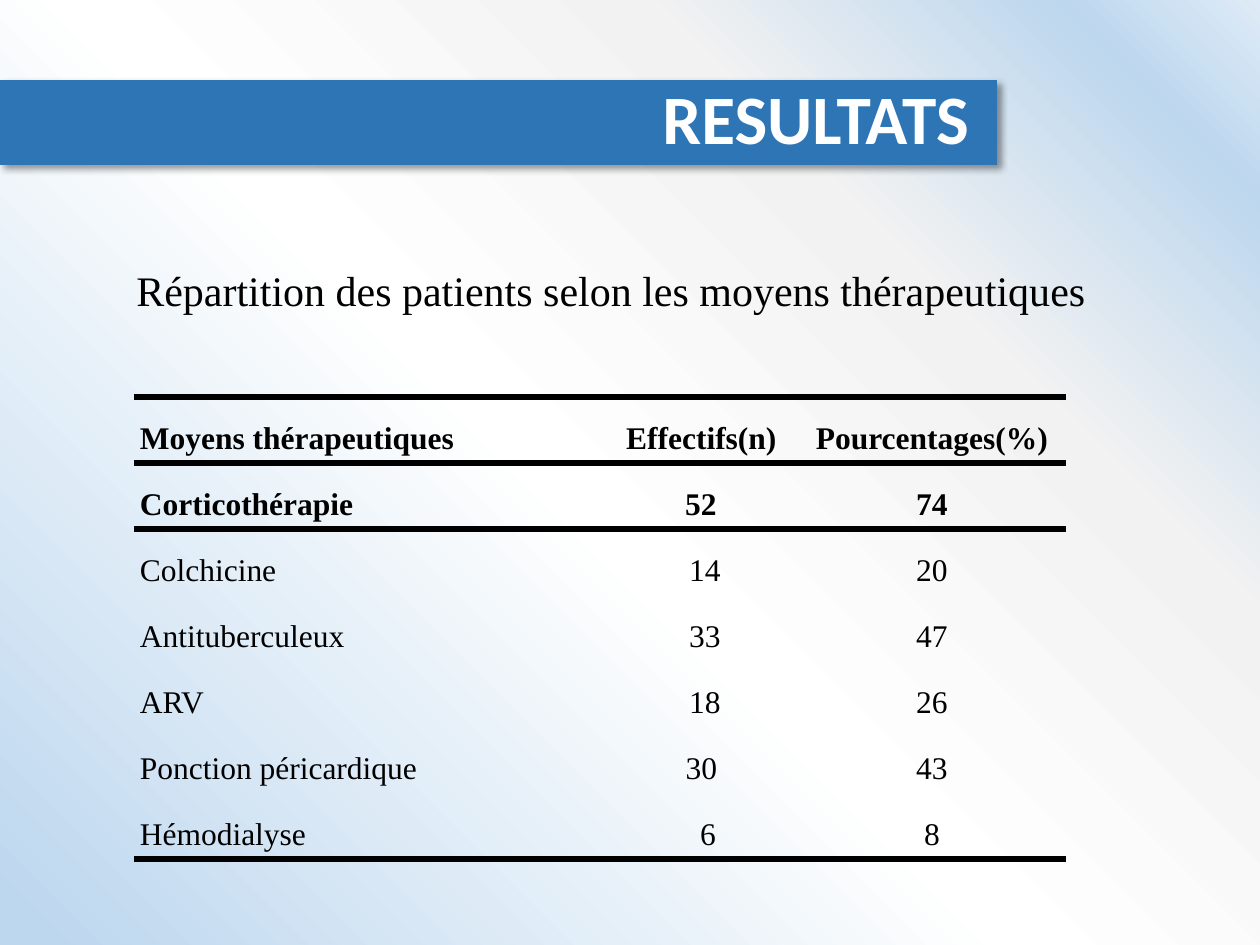
"""Build the results slide: title band, caption and table of treatments."""
from dataclasses import dataclass

from pptx import Presentation
from pptx.dml.color import RGBColor
from pptx.enum.shapes import MSO_SHAPE
from pptx.enum.text import MSO_ANCHOR, PP_ALIGN
from pptx.oxml import parse_xml
from pptx.oxml.ns import nsdecls, qn
from pptx.slide import Slide
from pptx.table import _Cell
from pptx.util import Emu, Pt

RECT = MSO_SHAPE.RECTANGLE
MIDDLE = MSO_ANCHOR.MIDDLE
LEFT, CENTER, RIGHT = PP_ALIGN.LEFT, PP_ALIGN.CENTER, PP_ALIGN.RIGHT
SCALE = 914400 / 126
PLAIN_STYLE = "{2D5ABB26-0587-4C30-8999-92F81FD0307C}"


@dataclass(frozen=True)
class Theme:
    """Colours, fonts and type sizes."""
    ink: str = "000000"
    band: str = "2E75B6"
    light: str = "FFFFFF"
    sans: str = "Calibri"
    serif: str = "Times New Roman"
    title: float = 39.6
    lead: float = 24
    body: float = 18
    rule: float = 3.75
    stops: tuple = ((0, "DEEBF7"), (9, "BDD7EE"), (28, "F2F2F2"),
                    (54, "FFFFFF"), (98, "BDD7EE"))


@dataclass(frozen=True)
class Row:
    """One table row, with the indent of its count."""
    name: str
    count: str
    share: str
    indent: int = 8
    bold: bool = False


THEME = Theme()
COLS = (470, 194, 268)
HEIGHT = 66
ROWS = (
    Row("Moyens thérapeutiques", "Effectifs(n)", "Pourcentages(%)", 1, True),
    Row("Corticothérapie", "52", "74", 0, True),
    Row("Colchicine", "14", "20"),
    Row("Antituberculeux", "33", "47"),
    Row("ARV", "18", "26"),
    Row("Ponction péricardique", "30", "43", 1),
    Row("Hémodialyse", "6", "8", 14),
)


def px(size: int) -> Emu:
    """Turn pixels into EMU."""
    return Emu(round(size * SCALE))


def write(frame, text: str, face: str, size: float, color: str,
          align=LEFT, bold: bool = False, gap: float = 1, indent: int = 0) -> None:
    """Fill a text frame with one styled paragraph."""
    para = frame.paragraphs[0]
    para.text = text
    para.alignment = align
    para.line_spacing = gap
    font = para.font
    font.name, font.size, font.bold = face, Pt(size), bold
    font.color.rgb = RGBColor.from_string(color)
    if indent:
        para._p.get_or_add_pPr().set("marL", str(px(indent)))


def paint(slide: Slide) -> None:
    """Give the slide its corner gradient."""
    stops = "".join(
        f'<a:gs pos="{pos * 1000}"><a:srgbClr val="{color}"/></a:gs>'
        for pos, color in THEME.stops)
    slide.element.cSld.insert(0, parse_xml(
        f'<p:bg {nsdecls("p", "a")}><p:bgPr><a:gradFill rotWithShape="1">'
        f'<a:gsLst>{stops}</a:gsLst><a:path path="circle">'
        '<a:fillToRect l="100000" b="100000"/></a:path>'
        '<a:tileRect t="-100000" r="-100000"/></a:gradFill>'
        '<a:effectLst/></p:bgPr></p:bg>'))


def banner(slide: Slide, text: str) -> None:
    """Draw the title band with its soft shadow."""
    band = slide.shapes.add_shape(RECT, 0, px(80), px(997), px(85))
    band.fill.solid()
    band.fill.fore_color.rgb = RGBColor.from_string(THEME.band)
    band.line.fill.background()
    band.shadow.inherit = False
    band.element.spPr.find(qn("a:effectLst")).append(parse_xml(
        f'<a:outerShdw {nsdecls("a")} blurRad="{Pt(4)}" dist="{Pt(3)}" '
        f'dir="2700000" algn="tl" rotWithShape="0"><a:srgbClr val="{THEME.ink}">'
        '<a:alpha val="40000"/></a:srgbClr></a:outerShdw>'))
    frame = band.text_frame
    frame.word_wrap = True
    frame.vertical_anchor = MIDDLE
    frame.margin_right = px(28)
    write(frame, text, THEME.sans, THEME.title, THEME.light, RIGHT, True, 0.9)


def caption(slide: Slide, text: str) -> None:
    """Write the line above the table."""
    frame = slide.shapes.add_textbox(px(87), px(252), px(1086), px(600)).text_frame
    frame.word_wrap = True
    frame.margin_top = px(12)
    write(frame, text, THEME.serif, THEME.lead, THEME.ink, indent=37)


def rule(cell: _Cell, side: str) -> None:
    """Add a thick border on one side of a cell."""
    line = parse_xml(
        f'<a:{side} {nsdecls("a")} w="{Pt(THEME.rule)}"><a:solidFill>'
        f'<a:srgbClr val="{THEME.ink}"/></a:solidFill></a:{side}>')
    cell._tc.get_or_add_tcPr().insert(0, line)


def grid(slide: Slide, rows: tuple[Row, ...]) -> None:
    """Draw the table with rules around the head and at the foot."""
    frame = slide.shapes.add_table(len(rows), len(COLS), px(134), px(397),
                                   px(sum(COLS)), px(HEIGHT * len(rows)))
    table = frame.table
    table.first_row = table.horz_banding = False
    next(frame.element.iter(qn("a:tableStyleId"))).text = PLAIN_STYLE
    for col, width in zip(table.columns, COLS):
        col.width = px(width)
    for at, row in enumerate(rows):
        table.rows[at].height = px(HEIGHT)
        parts = ((row.name, LEFT, 0), (row.count, CENTER, row.indent),
                 (row.share, CENTER, 0))
        for col, (text, align, indent) in enumerate(parts):
            cell = table.cell(at, col)
            cell.fill.background()
            cell.vertical_anchor = MIDDLE
            cell.margin_left = cell.margin_right = px(6)
            cell.margin_top = cell.margin_bottom = 0
            write(cell.text_frame, text, THEME.serif, THEME.body, THEME.ink,
                  align, row.bold, 1.5, indent)
            if at in (0, len(rows) - 1):
                rule(cell, "lnB")
            if at in (0, 1):
                rule(cell, "lnT")


def main() -> None:
    """Build and save the slide."""
    deck = Presentation()
    deck.slide_width, deck.slide_height = px(1260), px(945)
    slide = deck.slides.add_slide(deck.slide_layouts[6])
    paint(slide)
    caption(slide, "Répartition des patients selon les moyens thérapeutiques")
    banner(slide, "RESULTATS")
    grid(slide, ROWS)
    deck.save("out.pptx")


if __name__ == "__main__":
    main()
